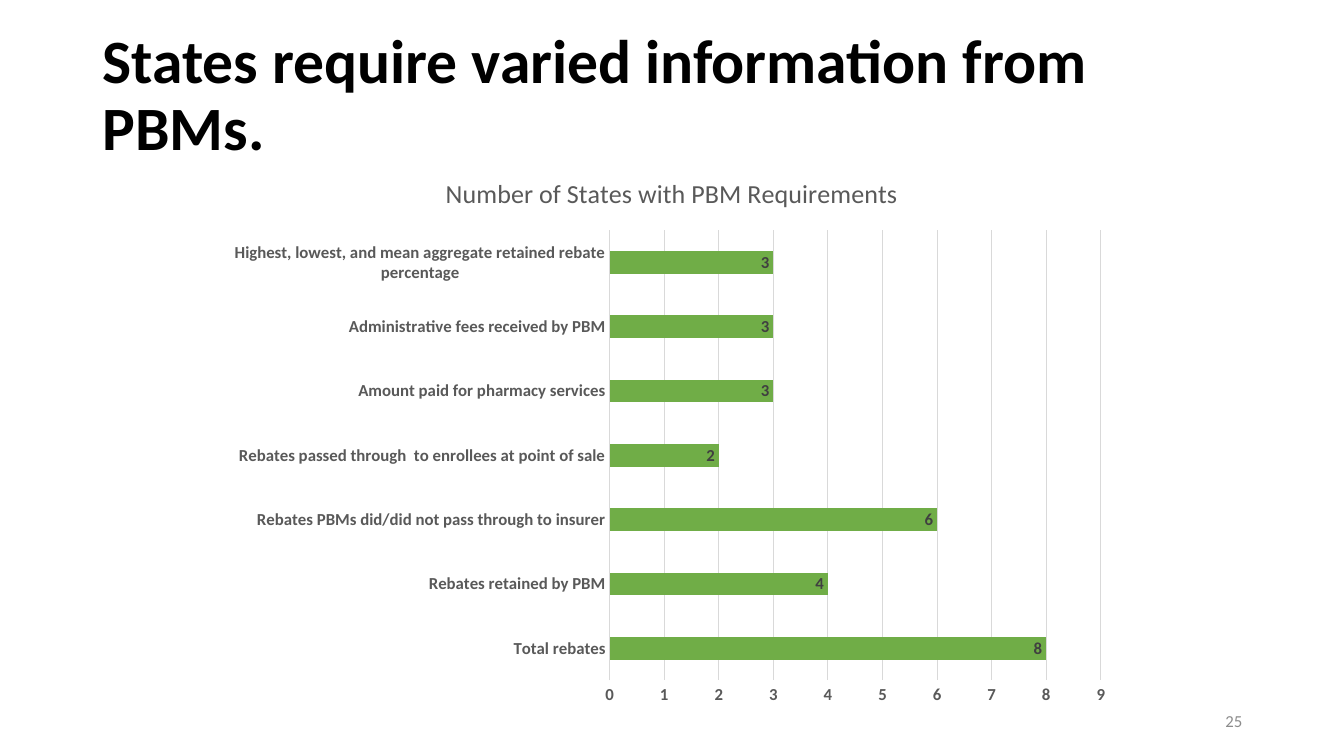
from pptx import Presentation
from pptx.chart.data import CategoryChartData
from pptx.dml.color import RGBColor
from pptx.enum.chart import XL_CHART_TYPE, XL_LABEL_POSITION, XL_TICK_MARK
from pptx.enum.text import MSO_ANCHOR, PP_ALIGN
from pptx.util import Inches, Pt

BAR_CLUSTERED = XL_CHART_TYPE.BAR_CLUSTERED
INSIDE_END = XL_LABEL_POSITION.INSIDE_END
NO_TICK = XL_TICK_MARK.NONE
MIDDLE = MSO_ANCHOR.MIDDLE
LEFT, RIGHT = PP_ALIGN.LEFT, PP_ALIGN.RIGHT

FONT = "Calibri"
COLORS = {
    "title": "000000",
    "axis": "595959",
    "label": "404040",
    "grid": "D9D9D9",
    "bar": "70AD47",
    "number": "8C8C8C",
}
REQUIREMENTS = [
    ("Total rebates", 8),
    ("Rebates retained by PBM", 4),
    ("Rebates PBMs did/did not pass through to insurer", 6),
    ("Rebates passed through  to enrollees at point of sale", 2),
    ("Amount paid for pharmacy services", 3),
    ("Administrative fees received by PBM", 3),
    ("Highest, lowest, and mean aggregate retained rebate percentage", 3),
]


def style_font(font, size, color, bold):
    font.name = FONT
    font.size = Pt(size)
    font.bold = bold
    font.color.rgb = RGBColor.from_string(COLORS[color])


deck = Presentation()
deck.slide_width, deck.slide_height = Inches(13.33), Inches(7.5)
page = deck.slides.add_slide(deck.slide_layouts[6])

# Title and page number
texts = [
    ("States require varied information from PBMs.",
     (0.92, 0.4, 11.5, 1.12), 44, "title", True, LEFT, 0.9),
    ("25", (9.42, 6.95, 3, 0.4), 12, "number", False, RIGHT, 1.0),
]
for words, place, size, color, bold, align, spacing in texts:
    box = page.shapes.add_textbox(*[Inches(length) for length in place])
    frame = box.text_frame
    frame.word_wrap = True
    frame.vertical_anchor = MIDDLE
    para = frame.paragraphs[0]
    para.alignment = align
    para.line_spacing = spacing
    span = para.add_run()
    span.text = words
    style_font(span.font, size, color, bold)

# Bar chart
data = CategoryChartData(number_format="General")
data.categories = [name for name, _ in REQUIREMENTS]
data.add_series("Series 1", [count for _, count in REQUIREMENTS])
chart = page.shapes.add_chart(
    BAR_CLUSTERED, Inches(2.19), Inches(1.53), Inches(8.95), Inches(5.57), data
).chart
chart.has_legend = False
chart.font.name = FONT
chart.font.size = Pt(10)

chart.has_title = True
chart.chart_title.include_in_layout = False
heading = chart.chart_title.text_frame.paragraphs[0].add_run()
heading.text = "Number of States with PBM Requirements"
style_font(heading.font, 18.6, "axis", False)

for axis in (chart.category_axis, chart.value_axis):
    axis.major_tick_mark = axis.minor_tick_mark = NO_TICK
    style_font(axis.tick_labels.font, 12, "axis", True)

chart.value_axis.minimum_scale = 0
chart.value_axis.maximum_scale = 9
chart.value_axis.major_unit = 1
chart.value_axis.has_major_gridlines = True
chart.value_axis.format.line.fill.background()
for line in (chart.category_axis.format.line,
             chart.value_axis.major_gridlines.format.line):
    line.width = Pt(0.75)
    line.color.rgb = RGBColor.from_string(COLORS["grid"])

plot = chart.plots[0]
plot.gap_width = 182
plot.vary_by_categories = False
bars = plot.series[0]
bars.format.fill.solid()
bars.format.fill.fore_color.rgb = RGBColor.from_string(COLORS["bar"])
labels = bars.data_labels
labels.show_value = True
labels.position = INSIDE_END
style_font(labels.font, 12, "label", True)

deck.save("out.pptx")
